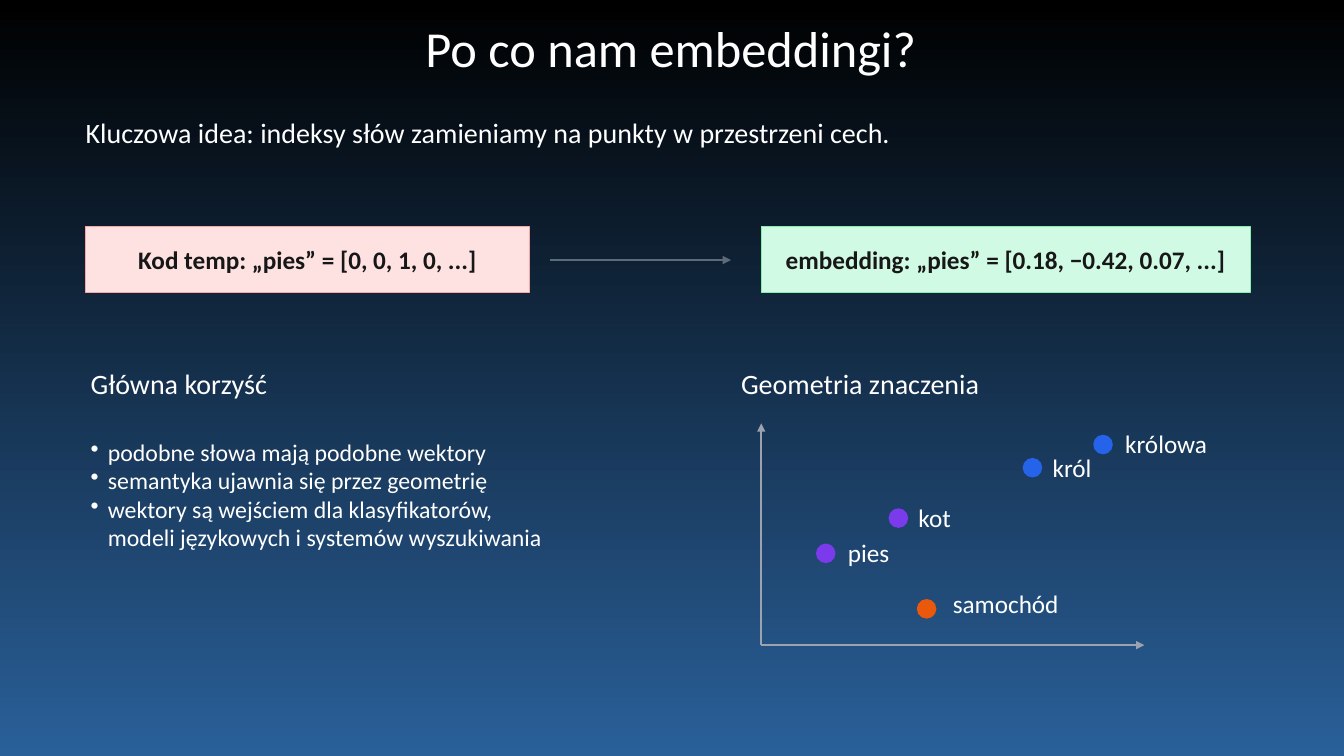
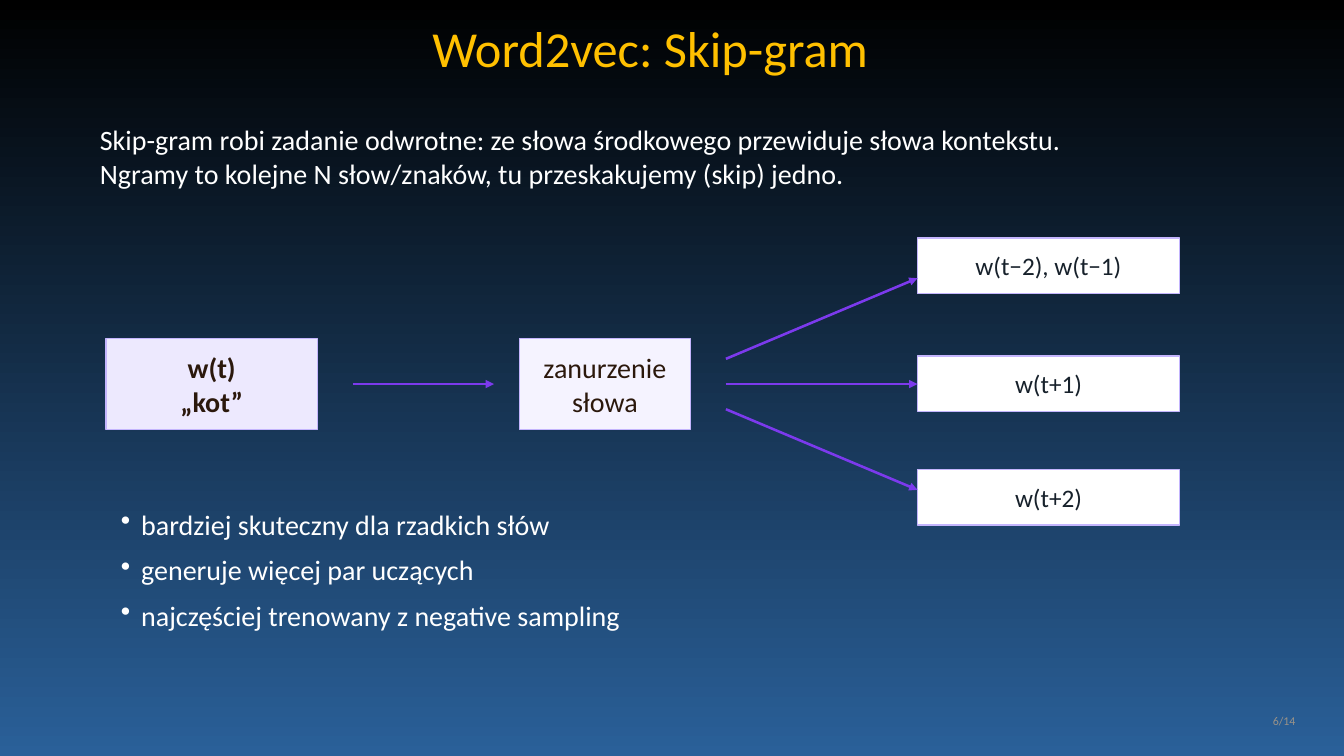
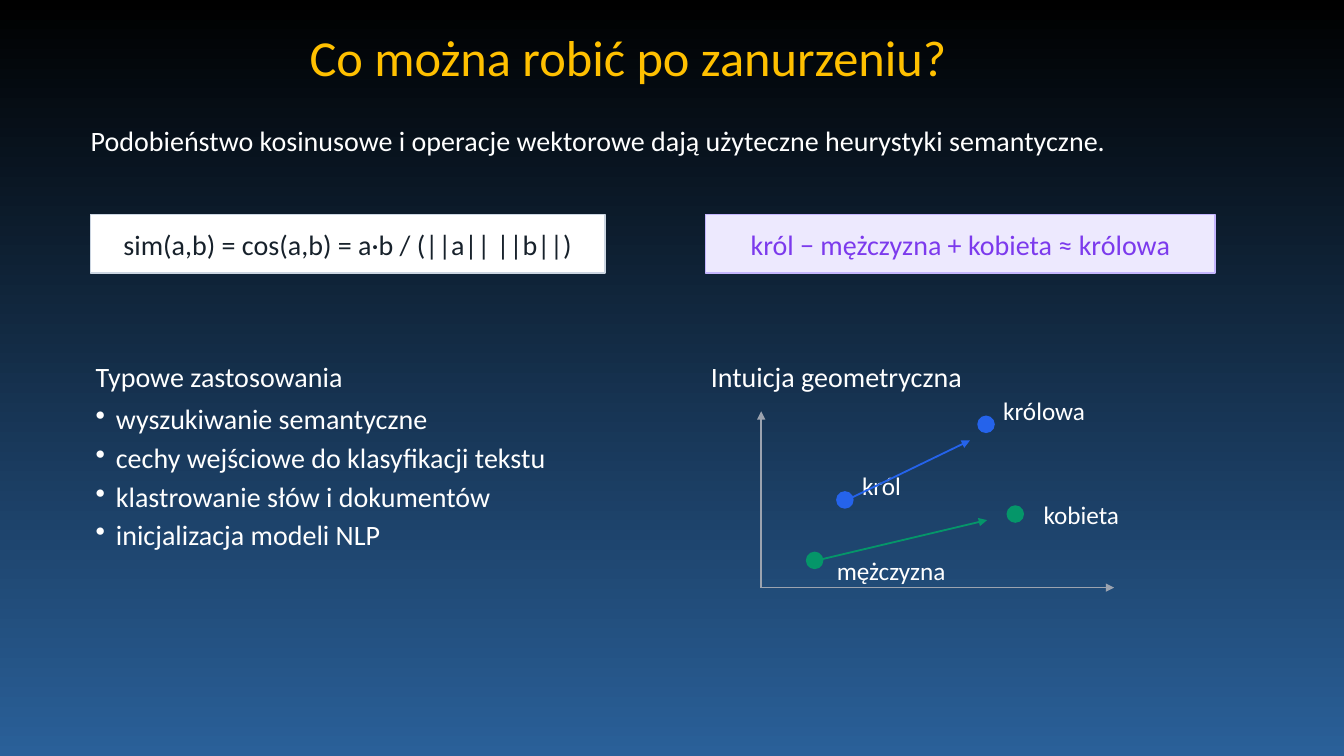
from pptx import Presentation
from pptx.dml.color import RGBColor
from pptx.enum.shapes import MSO_CONNECTOR, MSO_SHAPE
from pptx.enum.text import MSO_ANCHOR, MSO_AUTO_SIZE, PP_ALIGN
from pptx.oxml.ns import qn
from pptx.util import Inches, Pt
from lxml.etree import SubElement

# Shared look; the grid has 13.33 columns and 7.5 rows of one inch
CELL = Inches(1)
COLUMNS, ROWS = 13.33, 7.5
FONT = "Calibri"
WHITE, GOLD, INK, BROWN, BLACK = "FFFFFF", "FFC000", "17212B", "2B180C", "171717"
VIOLET, LILAC, PALE_LILAC = "7C3AED", "C4B5FD", "EDE9FE"
BLUE, GREEN, ORANGE, AXIS_GREY = "2563EB", "059669", "EA580C", "9CA3AF"
LEFT, CENTER, RIGHT = PP_ALIGN.LEFT, PP_ALIGN.CENTER, PP_ALIGN.RIGHT
color = RGBColor.from_string


def add_box(page, place, lines=(), kind=None, fill=None, line=None, size=20,
            ink=WHITE, bold=False, bullets=False, **paragraph_format):
    """Add a text box, a filled shape of the given kind, or fill the title."""
    place = [int(length * CELL) for length in place]
    if kind == "title":
        box = page.shapes.title
        box.left, box.top, box.width, box.height = place
    elif kind is None:
        box = page.shapes.add_textbox(*place)
    else:
        box = page.shapes.add_shape(kind, *place)
        box.shadow.inherit = False
        box.fill.solid()
        box.fill.fore_color.rgb = color(fill)
        box.line.color.rgb = color(line or fill)
        box.line.width = Pt(1)
    frame = box.text_frame
    frame_format = dict(word_wrap=True, auto_size=MSO_AUTO_SIZE.NONE,
                        vertical_anchor=MSO_ANCHOR.MIDDLE, margin_left=0,
                        margin_right=0, margin_top=0, margin_bottom=0)
    for name, value in frame_format.items():
        setattr(frame, name, value)
    for number, text in enumerate(lines):
        para = frame.add_paragraph() if number else frame.paragraphs[0]
        para.text = text
        if bullets:
            indent = int(size * CELL / 100)
            properties = para._p.get_or_add_pPr()
            properties.set("marL", str(indent))
            properties.set("indent", str(-indent))
            SubElement(properties, qn("a:buChar")).set("char", "•")
        for name, value in paragraph_format.items():
            setattr(para, name, value)
        for span in para.runs:
            for name, value in dict(name=FONT, size=Pt(size), bold=bold).items():
                setattr(span.font, name, value)
            span.font.color.rgb = color(ink)


def add_arrow(page, start, end, ink, width):
    """Add a straight line with an arrowhead at its end."""
    ends = [int(length * CELL) for length in (*start, *end)]
    arrow = page.shapes.add_connector(MSO_CONNECTOR.STRAIGHT, *ends)
    arrow.line.color.rgb = color(ink)
    arrow.line.width = Pt(width)
    properties = arrow.element.spPr
    SubElement(properties.find(qn("a:ln")), qn("a:tailEnd")).set("type", "triangle")
    SubElement(properties, qn("a:effectLst"))


# Deck with a gradient background on the master
deck = Presentation()
deck.slide_width, deck.slide_height = int(COLUMNS * CELL), int(ROWS * CELL)
background = deck.slide_master.background.fill
background.gradient()
background.gradient_angle = 270
for stop, shade in zip(background.gradient_stops, ("000000", "2A6099")):
    stop.color.rgb = color(shade)

# Titles and lead sentences
openings = [
    ("Po co nam embeddingi?", (4.22, 0.24), WHITE, LEFT, (0.85, 0.88, 8.63, 0.87),
     "Kluczowa idea: indeksy słów zamieniamy na punkty w przestrzeni cech."),
    ("Word2vec: Skip-gram", (2, 0.24), GOLD, CENTER, (0.99, 1, 10.5, 1.1),
     "Skip-gram robi zadanie odwrotne: ze słowa środkowego przewiduje słowa kontekstu.\v"
     "Ngramy to kolejne N słow/znaków, tu przeskakujemy (skip) jedno."),
    ("Co można robić po zanurzeniu?", (1.78, 0.33), GOLD, CENTER, (0.9, 0.89, 11.87, 1),
     "Podobieństwo kosinusowe i operacje wektorowe dają użyteczne heurystyki semantyczne."),
]
pages = []
for title, corner, ink, alignment, lead_place, lead in openings:
    page = deck.slides.add_slide(deck.slide_layouts[5])
    add_box(page, (*corner, 8.9, 0.45), [title], "title", size=36, ink=ink,
            alignment=alignment)
    add_box(page, lead_place, [lead])
    pages.append(page)
why_page, skipgram_page, uses_page = pages

# Filled boxes: page, place, lines, fill, line, text colour, size, bold
boxes = [
    (why_page, (0.85, 2.25, 4.4, 0.65), ["Kod temp: „pies” = [0, 0, 1, 0, ...]"],
     "FEE2E2", "FCA5A5", BLACK, 18, True),
    (why_page, (7.55, 2.25, 4.85, 0.65),
     ["embedding: „pies” = [0.18, −0.42, 0.07, ...]"],
     "D1FAE5", "86EFAC", BLACK, 18, True),
    (skipgram_page, (1.05, 3.36, 2.1, 0.9), ["w(t)", "„kot”"],
     PALE_LILAC, LILAC, BROWN, 20, True),
    (skipgram_page, (5.15, 3.36, 1.7, 0.9), ["zanurzenie", "słowa"],
     "F5F3FF", LILAC, BROWN, 20, False),
    (uses_page, (0.9, 2.13, 5.1, 0.58), ["sim(a,b) = cos(a,b) = a·b / (||a|| ||b||)"],
     WHITE, "CBD5E1", INK, 20, False),
    (uses_page, (7, 2.13, 5.05, 0.58), ["król − mężczyzna + kobieta ≈ królowa"],
     PALE_LILAC, LILAC, VIOLET, 20, False),
]
for top, word in ((2.36, "w(t−2), w(t−1)"), (3.53, "w(t+1)"), (4.66, "w(t+2)")):
    boxes.append((skipgram_page, (9.1, top, 2.6, 0.55), [word],
                  WHITE, LILAC, INK, 18, False))
for page, place, lines, fill, line, ink, size, bold in boxes:
    add_box(page, place, lines, MSO_SHAPE.RECTANGLE, fill, line, size, ink, bold,
            alignment=CENTER)

# Section headings
for page, left, top, heading in (
        (why_page, 0.9, 3.65, "Główna korzyść"),
        (why_page, 7.35, 3.65, "Geometria znaczenia"),
        (uses_page, 0.95, 3.58, "Typowe zastosowania"),
        (uses_page, 7.05, 3.58, "Intuicja geometryczna")):
    add_box(page, (left, top, 3.3, 0.3), [heading])

# Bullet lists
add_box(why_page, (0.9, 4.08, 5.35, 1.65),
        ["podobne słowa mają podobne wektory",
         "semantyka ujawnia się przez geometrię",
         "wektory są wejściem dla klasyfikatorów,\vmodeli językowych i systemów wyszukiwania"],
        size=17, bullets=True)
add_box(skipgram_page, (1.2, 5.01, 10.5, 1.25),
        ["bardziej skuteczny dla rzadkich słów",
         "generuje więcej par uczących",
         "najczęściej trenowany z negative sampling"],
        bullets=True, line_spacing=1.1, space_after=Pt(6))
add_box(uses_page, (0.95, 4, 4.6, 1.5),
        ["wyszukiwanie semantyczne",
         "cechy wejściowe do klasyfikacji tekstu",
         "klastrowanie słów i dokumentów",
         "inicjalizacja modeli NLP"],
        bullets=True, line_spacing=0.9, space_after=Pt(6))

# Word maps: axes, then dots with labels shifted from the dot's corner
word_maps = [
    (why_page, (7.55, 6.4), 11.35, 4.2, 1.2, 0.18, [
        ("pies", VIOLET, 8.1, 5.4, 0.31, -0.02),
        ("kot", VIOLET, 8.82, 5.05, 0.29, -0.02),
        ("król", BLUE, 10.15, 4.55, 0.29, -0.01),
        ("królowa", BLUE, 10.85, 4.32, 0.31, -0.02),
        ("samochód", ORANGE, 9.1, 5.95, 0.35, -0.06)]),
    (uses_page, (7.55, 5.83), 11.05, 4.08, 1.1, 0.16, [
        ("król", BLUE, 8.3, 4.88, 0.25, -0.16),
        ("królowa", BLUE, 9.7, 4.13, 0.25, -0.16),
        ("mężczyzna", GREEN, 8, 5.48, 0.3, 0.08),
        ("kobieta", GREEN, 9.99, 5.02, 0.36, -0.02)]),
]
for page, origin, right, top, width, dot, words in word_maps:
    add_arrow(page, origin, (right, origin[1]), AXIS_GREY, width)
    add_arrow(page, origin, (origin[0], top), AXIS_GREY, width)
    for word, fill, x, y, shift_x, shift_y in words:
        add_box(page, (x, y, dot, dot), kind=MSO_SHAPE.OVAL, fill=fill)
        add_box(page, (x + shift_x, y + shift_y, 1.33, 0.2), [word], size=18)

# Arrows between boxes and between words
add_arrow(why_page, (5.45, 2.58), (7.25, 2.58), "5D6B78", 2)
add_arrow(skipgram_page, (3.5, 3.81), (4.9, 3.81), VIOLET, 2)
for step in (-1, 0, 1):
    add_arrow(skipgram_page, (7.2, 3.81 + 0.25 * step), (9.1, 3.81 + 1.05 * step),
              VIOLET, 1.8)
add_arrow(uses_page, (8.1, 5.56), (9.79, 5.16), GREEN, 1.3)
add_arrow(uses_page, (8.4, 4.96), (9.62, 4.37), BLUE, 1.3)

# Page number
add_box(skipgram_page, (12.25, 7.05, 0.6, 0.2), ["6/14"], size=8.5, ink="9A9288",
        alignment=RIGHT)

deck.save("out.pptx")
